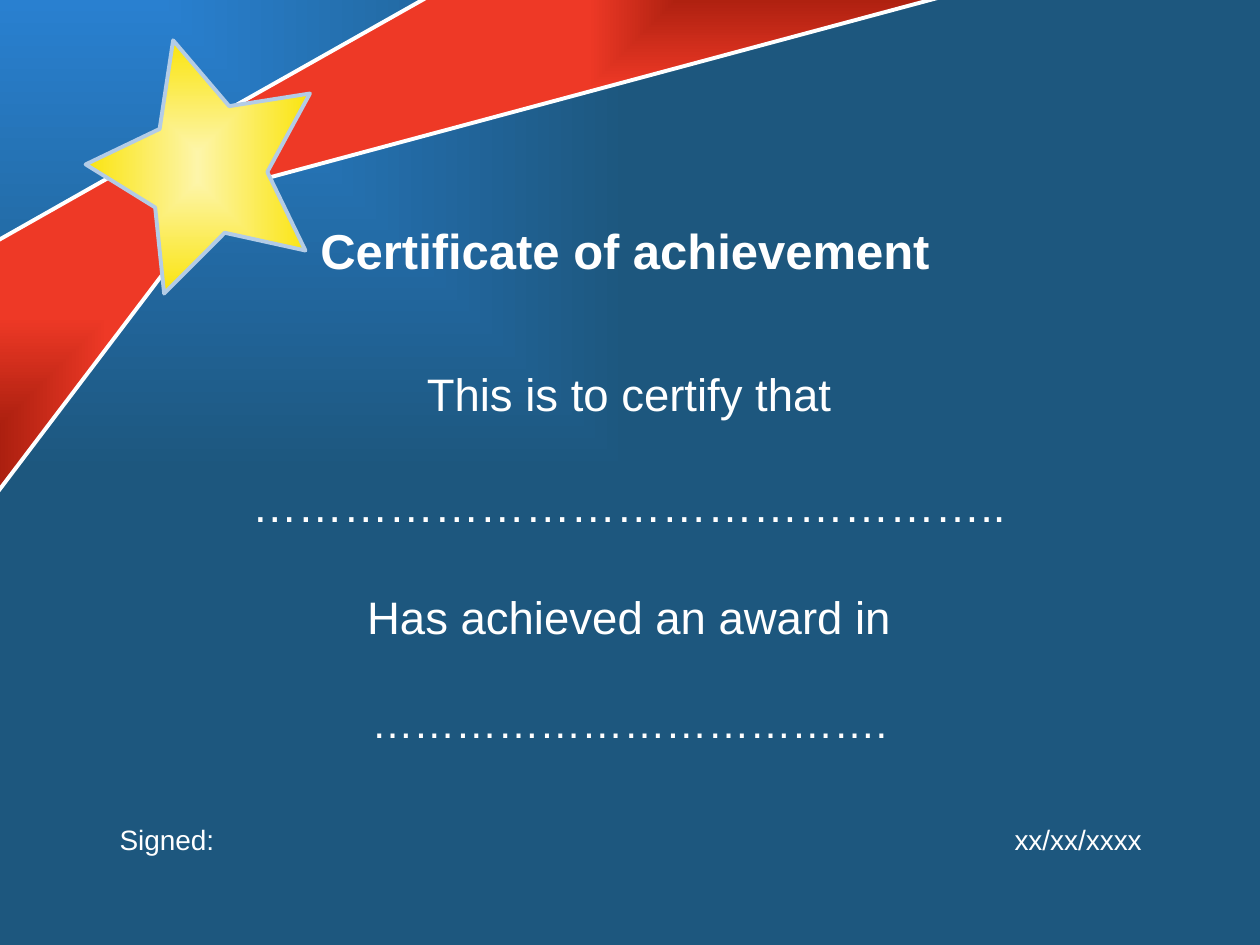
from dataclasses import dataclass

import pptx
import pptx.dml.color
import pptx.enum.shapes
import pptx.enum.text
import pptx.oxml
import pptx.oxml.ns
import pptx.util

ALIGN = pptx.enum.text.PP_ALIGN
COLUMNS, ROWS = 100, 75
CELL = pptx.util.Inches(0.1)


@dataclass(frozen=True)
class Theme:
    font: str = "Arial"
    white: str = "FFFFFF"
    star_edge: str = "B3CCE6"
    backdrop: tuple = ("2980D0", "1D577E")
    ribbon: tuple = ("A51D0D", "EE3926")
    star: tuple = ("FDF5A9", "FAE40E")
    title_size: int = 28
    body_size: int = 26
    award_size: int = 24
    footer_size: int = 16
    line_width: float = 2.25
    line_spacing: float = 1.05
    gap: float = 1.2  # space between body lines, as a share of the type size


THEME = Theme()


def cells(count):
    return pptx.util.Emu(round(count * CELL))


def color(value):
    return pptx.dml.color.RGBColor.from_string(value)


def fill_rectangular_gradient(shape, colors, focus):
    """Blend from the focus (left, top, right, bottom insets in percent) outwards."""
    stops = "".join(
        f'<a:gs pos="{position}"><a:srgbClr val="{value}"/></a:gs>'
        for position, value in zip((0, 100000), colors)
    )
    insets = " ".join(f'{side}="{inset * 1000}"' for side, inset in zip("ltrb", focus))
    gradient = pptx.oxml.parse_xml(
        f'<a:gradFill {pptx.oxml.ns.nsdecls("a")} rotWithShape="1"><a:gsLst>{stops}</a:gsLst>'
        f'<a:path path="rect"><a:fillToRect {insets}/></a:path></a:gradFill>'
    )
    shape.fill.background()
    placeholder_fill = shape.element.spPr.find(pptx.oxml.ns.qn("a:noFill"))
    placeholder_fill.getparent().replace(placeholder_fill, gradient)
    shape.shadow.inherit = False


def add_polygon(slide, box, points, colors, focus, line_color):
    """Draw an outline whose points are shares of the box."""
    left, top, width, height = box
    corners = [(cells(left + x * width), cells(top + y * height)) for x, y in points]
    builder = slide.shapes.build_freeform(*corners[0])
    builder.add_line_segments(corners[1:], close=True)
    shape = builder.convert_to_shape()
    fill_rectangular_gradient(shape, colors, focus)
    shape.line.color.rgb = color(line_color)
    shape.line.width = pptx.util.Pt(THEME.line_width)


def place(shape, box):
    shape.left, shape.top, shape.width, shape.height = map(cells, box)


def write(paragraph, text, *, size, align=ALIGN.LEFT, bold=False, space_before=0):
    properties = paragraph._p.get_or_add_pPr()
    properties.set("marL", "0")
    properties.set("indent", "0")
    properties.append(pptx.oxml.parse_xml(f'<a:buNone {pptx.oxml.ns.nsdecls("a")}/>'))
    paragraph.text = text
    paragraph.alignment = align
    paragraph.line_spacing = THEME.line_spacing
    paragraph.space_before = pptx.util.Pt(space_before)
    paragraph.font.name = THEME.font
    paragraph.font.size = pptx.util.Pt(size)
    paragraph.font.bold = bold
    paragraph.font.color.rgb = color(THEME.white)


def prepare_frame(shape):
    frame = shape.text_frame
    frame.word_wrap = True
    frame.auto_size = pptx.enum.text.MSO_AUTO_SIZE.NONE
    frame.vertical_anchor = pptx.enum.text.MSO_ANCHOR.TOP
    return frame


def add_backdrop(slide, box):
    shape = slide.shapes.add_shape(
        pptx.enum.shapes.MSO_SHAPE.RECTANGLE, *map(cells, box)
    )
    fill_rectangular_gradient(shape, THEME.backdrop, (0, 0, 100, 100))
    shape.line.fill.background()
    slide.shapes.element.insert(2, shape.element)  # behind the placeholders


def add_lower_ribbon(slide, box):
    points = [(0.86, 0), (0, 0.31), (0, 1), (1, 0.16)]
    add_polygon(slide, box, points, THEME.ribbon, (0, 100, 100, 0), THEME.white)


def add_upper_ribbon(slide, box):
    points = [(0.32, 0), (0, 0.7), (0.04, 1), (1, 0)]
    add_polygon(slide, box, points, THEME.ribbon, (100, 0, 0, 100), THEME.white)


def add_star(slide, box):
    points = [
        (1, 0.21), (0.64, 0.26), (0.39, 0), (0.33, 0.35), (0, 0.49),
        (0.31, 0.66), (0.35, 1), (0.62, 0.76), (0.98, 0.83), (0.81, 0.52),
    ]
    add_polygon(slide, box, points, THEME.star, (50, 50, 50, 50), THEME.star_edge)


def fill_title(slide, box):
    title = slide.shapes.title
    place(title, box)
    write(prepare_frame(title).paragraphs[0], "Certificate of achievement",
          size=THEME.title_size, align=ALIGN.CENTER, bold=True)


def fill_body(slide, box):
    body = slide.placeholders[1]
    place(body, box)
    frame = prepare_frame(body)
    lines = [
        ("This is to certify that", THEME.body_size),
        ("…………………………………………..", THEME.body_size),
        ("Has achieved an award in", THEME.body_size),
        ("……………………………….", THEME.award_size),
    ]
    for index, (text, size) in enumerate(lines):
        paragraph = frame.add_paragraph() if index else frame.paragraphs[0]
        write(paragraph, text, size=size, align=ALIGN.CENTER,
              space_before=THEME.gap * size if index else 0)


def add_footer(slide, box):
    """Put the signature at the left end of the box and the date at the right."""
    left, top, width, height = box
    field = 13.9
    entries = [
        ("Signed:", left, ALIGN.LEFT),
        ("xx/xx/xxxx", left + width - field, ALIGN.RIGHT),
    ]
    for text, start, align in entries:
        label = slide.shapes.add_textbox(*map(cells, (start, top, field, height)))
        write(prepare_frame(label).paragraphs[0], text,
              size=THEME.footer_size, align=align)


def build_certificate(presentation):
    slide = presentation.slides.add_slide(presentation.slide_layouts[1])
    add_backdrop(slide, (0, 0, COLUMNS, ROWS))
    add_lower_ribbon(slide, (-0.9, 10.3, 18.9, 29.7))
    fill_body(slide, (6.1, 28.3, 87.7, 30.7))
    add_footer(slide, (8.5, 64.7, 83.1, 3.7))
    fill_title(slide, (4.6, 16.8, 90, 5.7))
    add_upper_ribbon(slide, (15.5, -1.1, 62.4, 16.1))
    add_star(slide, (6.8, 3.2, 17.8, 20.1))


def main():
    presentation = pptx.Presentation()
    presentation.slide_width = cells(COLUMNS)
    presentation.slide_height = cells(ROWS)
    build_certificate(presentation)
    presentation.save("out.pptx")


if __name__ == "__main__":
    main()
